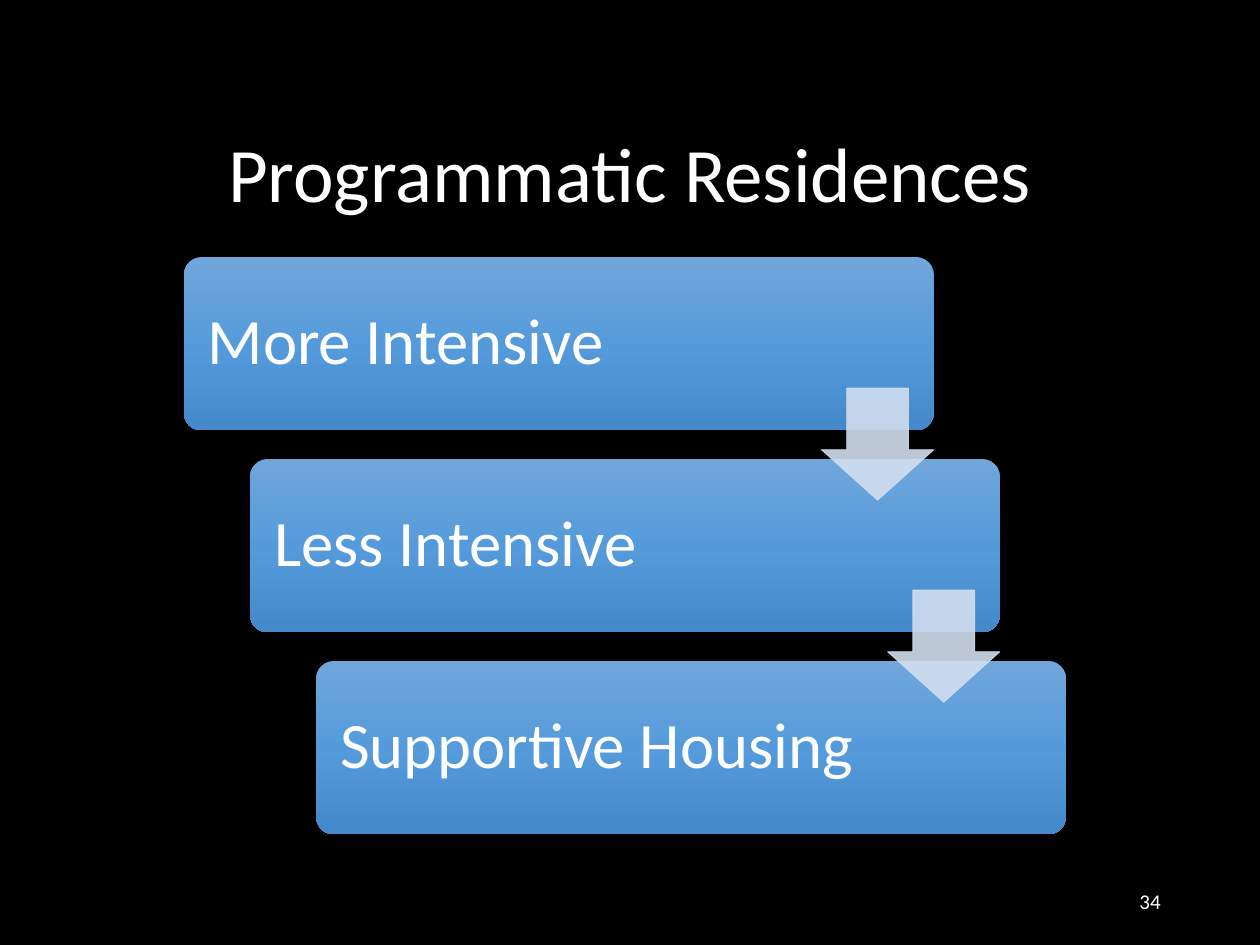
from copy import deepcopy

from lxml.etree import SubElement
from pptx import Presentation
from pptx.dml.color import RGBColor
from pptx.enum.shapes import MSO_SHAPE
from pptx.enum.text import MSO_ANCHOR, PP_ALIGN
from pptx.oxml.ns import qn
from pptx.util import Inches, Pt

THEME = {
    "background": RGBColor.from_string("000000"),
    "text": RGBColor.from_string("FFFFFF"),
    "arrow": RGBColor.from_string("D2DEEF"),
    "step_gradient": [(0, "71A6DB"), (0.5, "559BDB"), (1, "448ACA")],
    "font": "Calibri",
    "title_size": Pt(44),
    "step_size": Pt(37),
    "number_size": Pt(12),
}


def write_text(shape, text, size, align, line_spacing=1.0, inset=None):
    frame = shape.text_frame
    settings = {"word_wrap": True, "vertical_anchor": MSO_ANCHOR.MIDDLE}
    if inset is not None:
        for side in ("left", "right", "top", "bottom"):
            settings[f"margin_{side}"] = inset
    for name, value in settings.items():
        setattr(frame, name, value)
    para = frame.paragraphs[0]
    para.alignment = align
    para.line_spacing = line_spacing
    span = para.add_run()
    span.text = text
    for name, value in {"name": THEME["font"], "size": size, "bold": False}.items():
        setattr(span.font, name, value)
    span.font.color.rgb = THEME["text"]


def add_transparency(fill_parent, percent):
    color = fill_parent.find(qn("a:solidFill")).find(qn("a:srgbClr"))
    SubElement(color, qn("a:alpha")).set("val", str(percent * 1000))


deck = Presentation()
deck.slide_width, deck.slide_height = Inches(10), Inches(7.5)
page = deck.slides.add_slide(deck.slide_layouts[5])
page.background.fill.solid()
page.background.fill.fore_color.rgb = THEME["background"]

# Title
title = page.shapes.title
for name, value in {"left": 0.5, "top": 1, "width": 9, "height": 0.82}.items():
    setattr(title, name, Inches(value))
write_text(title, "Programmatic Residences", THEME["title_size"], PP_ALIGN.CENTER, 0.9)

# Slide number
number = page.shapes.add_textbox(Inches(7.06), Inches(6.95), Inches(2.25), Inches(0.4))
write_text(number, "34", THEME["number_size"], PP_ALIGN.RIGHT)

# Staircase of steps
steps = ["More Intensive", "Less Intensive", "Supportive Housing"]
first_left, first_top = 1.46, 2.04
step_width, step_height = 5.95, 1.375
shift_right, shift_down = 0.525, 1.603
staircase = page.shapes.add_group_shape()

for index, label in enumerate(steps):
    step = staircase.shapes.add_shape(
        MSO_SHAPE.ROUNDED_RECTANGLE,
        Inches(first_left + index * shift_right),
        Inches(first_top + index * shift_down),
        Inches(step_width), Inches(step_height))
    step.adjustments[0] = 0.1
    step.shadow.inherit = False
    step.line.fill.background()
    step.fill.gradient()
    step.fill.gradient_angle = 270
    stop_list = step._element.spPr.find(qn("a:gradFill")).find(qn("a:gsLst"))
    stop_list.insert(1, deepcopy(stop_list[0]))
    for stop, (position, color) in zip(step.fill.gradient_stops, THEME["step_gradient"]):
        stop.position = position
        stop.color.rgb = RGBColor.from_string(color)
    write_text(step, label, THEME["step_size"], PP_ALIGN.LEFT, 0.9, Inches(0.15))

# Arrows, right-aligned with the step they leave
arrow_size, arrow_drop = 0.89, 1.04
for index in range(len(steps) - 1):
    arrow = staircase.shapes.add_shape(
        MSO_SHAPE.DOWN_ARROW,
        Inches(first_left + step_width - arrow_size + index * shift_right),
        Inches(first_top + arrow_drop + index * shift_down),
        Inches(arrow_size), Inches(arrow_size))
    arrow.adjustments[0], arrow.adjustments[1] = 0.55, 0.45
    arrow.shadow.inherit = False
    arrow.line.width = Pt(0.5)
    for fill in (arrow.fill, arrow.line.fill):
        fill.solid()
        fill.fore_color.rgb = THEME["arrow"]
    properties = arrow._element.spPr
    for fill_parent in (properties, properties.find(qn("a:ln"))):
        add_transparency(fill_parent, 90)

deck.save("out.pptx")
